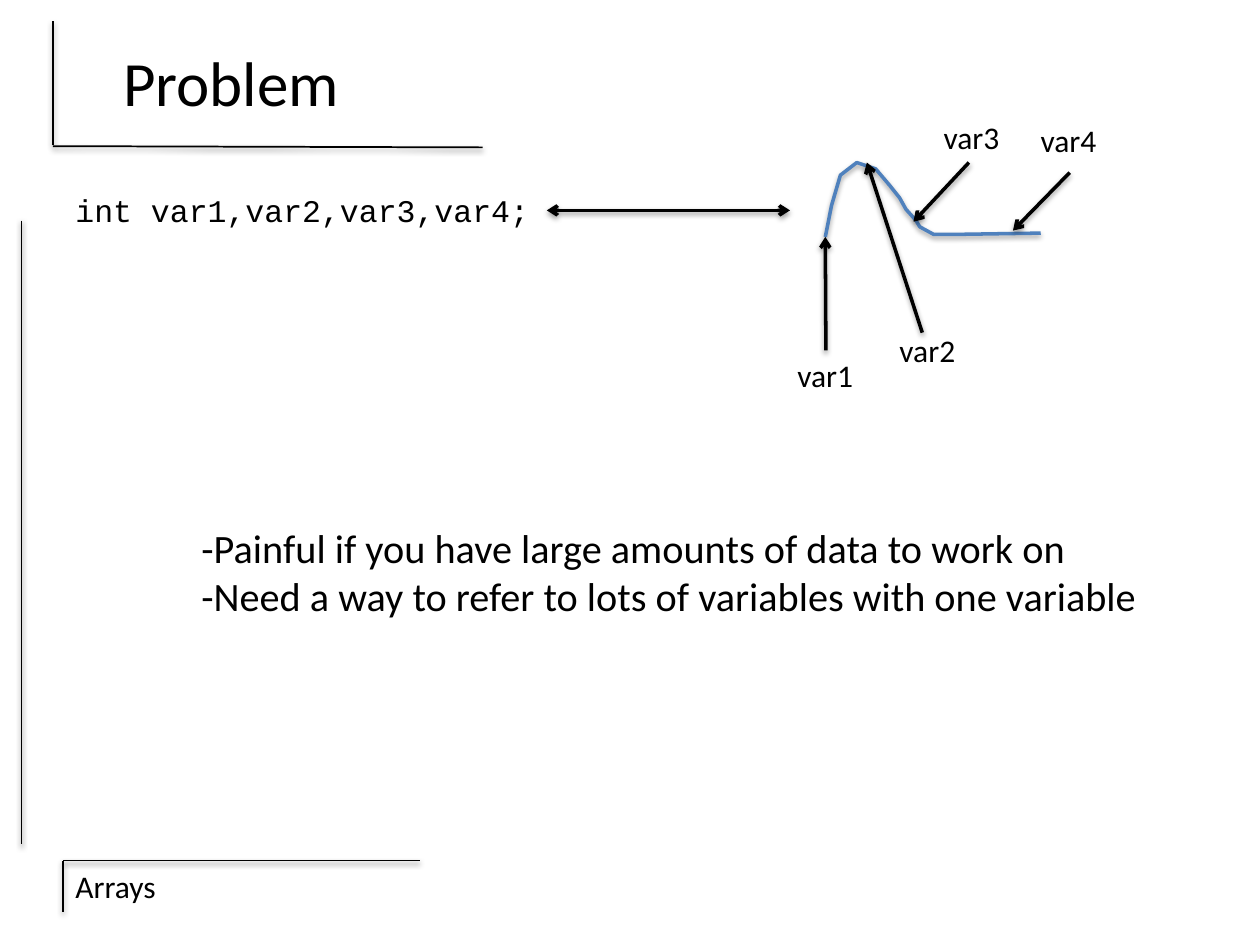
from dataclasses import dataclass

from lxml import etree
from pptx import Presentation
from pptx.dml import color
from pptx.enum import shapes, text
from pptx.oxml import ns
from pptx.util import Inches, Pt


@dataclass(frozen=True)
class Theme:
    ink = color.RGBColor(0, 0, 0)
    curve = color.RGBColor(0x4F, 0x81, 0xBD)
    sans: str = "Calibri"
    mono: str = "Courier New"
    title: int = 36
    body: int = 23
    label: int = 18
    rule: int = 1
    arrow: int = 2


theme = Theme()
SHADOW = (
    f'<a:effectLst {ns.nsdecls("a")}><a:outerShdw blurRad="{Pt(3.1)}" dist="{Pt(1.6)}" '
    'dir="5400000" rotWithShape="0"><a:srgbClr val="000000"><a:alpha val="38000"/>'
    "</a:srgbClr></a:outerShdw></a:effectLst>"
)

deck = Presentation()
deck.slide_width, deck.slide_height = Inches(10), Inches(7.5)
page = deck.slides.add_slide(deck.slide_layouts[6])


def add_text(lines, left, top, width, height, size=theme.label, font=theme.sans, wrap=False):
    box = page.shapes.add_textbox(Inches(left), Inches(top), Inches(width), Inches(height))
    frame = box.text_frame
    frame.word_wrap = wrap
    frame.text = lines
    for para in frame.paragraphs:
        para.font.size, para.font.name = Pt(size), font
        para.font.color.rgb = theme.ink
    return box


def add_line(start, end, width, ends=()):
    line = page.shapes.add_connector(
        shapes.MSO_CONNECTOR.STRAIGHT, *(Inches(v) for v in (*start, *end)))
    line.line.color.rgb = theme.ink
    line.line.width = Pt(width)
    for name in ends:
        etree.SubElement(line.line._get_or_add_ln(), ns.qn(f"a:{name}"), type="arrow")
    line._element.spPr.append(etree.fromstring(SHADOW))
    return line


# Frame rules around the title, left margin and footer
for start, end in [
    ((3.33, 6.83), (0.5, 6.83)),
    ((0.17, 1.75), (0.17, 6.7)),
    ((0.5, 6.83), (0.5, 7.24)),
    ((3.83, 1.17), (0.42, 1.16)),
    ((0.42, 0.17), (0.42, 1.15)),
]:
    add_line(start, end, theme.rule)

# Footer and title
add_text("Arrays", 0.5, 6.83, 2.42, 0.4, wrap=True)
title = add_text("Problem", 0.5, 0.17, 2.67, 0.95, theme.title, wrap=True)
title.text_frame.vertical_anchor = text.MSO_ANCHOR.MIDDLE
title.text_frame.paragraphs[0].alignment = text.PP_ALIGN.CENTER

# Declaration, linked to the curve it describes
declaration = add_text("int var1,var2,var3,var4;", 0.5, 1.47, 3.84, 0.4, font=theme.mono)
link = add_line((4.34, 1.66), (6.27, 1.67), theme.arrow, ("headEnd", "tailEnd"))
link.begin_connect(declaration, 3)

# Sampled curve
points = [(6.55, 1.88), (6.6, 1.63), (6.67, 1.39), (6.8, 1.29), (6.95, 1.34),
          (7.06, 1.47), (7.14, 1.57), (7.19, 1.66), (7.27, 1.75), (7.3, 1.8),
          (7.41, 1.86), (7.59, 1.86), (8.26, 1.85)]
corners = [(Inches(x), Inches(y)) for x, y in points]
builder = page.shapes.build_freeform(*corners[0])
builder.add_line_segments(corners[1:], close=False)
curve = builder.convert_to_shape()
curve.fill.background()
curve.line.color.rgb = theme.curve
curve.line.width = Pt(theme.arrow)
curve._element.spPr.append(etree.fromstring(SHADOW))

# Variable labels, each with an arrow to its place on the curve
labels = {}
for name, corner, start, end in [
    ("var1", (6.23, 2.78), (6.55, 2.78), (6.55, 1.88)),
    ("var2", (7.04, 2.58), (7.32, 2.64), (6.88, 1.29)),
    ("var3", (7.39, 0.89), (7.69, 1.29), (7.25, 1.76)),
    ("var4", (8.16, 0.91), (8.49, 1.37), (8.04, 1.83)),
]:
    label = add_text(name, *corner, 0.65, 0.4)
    arrow = add_line(start, end, theme.arrow, ("tailEnd",))
    if name == "var1":
        arrow.begin_connect(label, 0)

# Drawbacks
add_text("-Painful if you have large amounts of data to work on\n"
         "-Need a way to refer to lots of variables with one variable",
         1.5, 4.1, 7.69, 0.88, theme.body)

deck.save("out.pptx")
